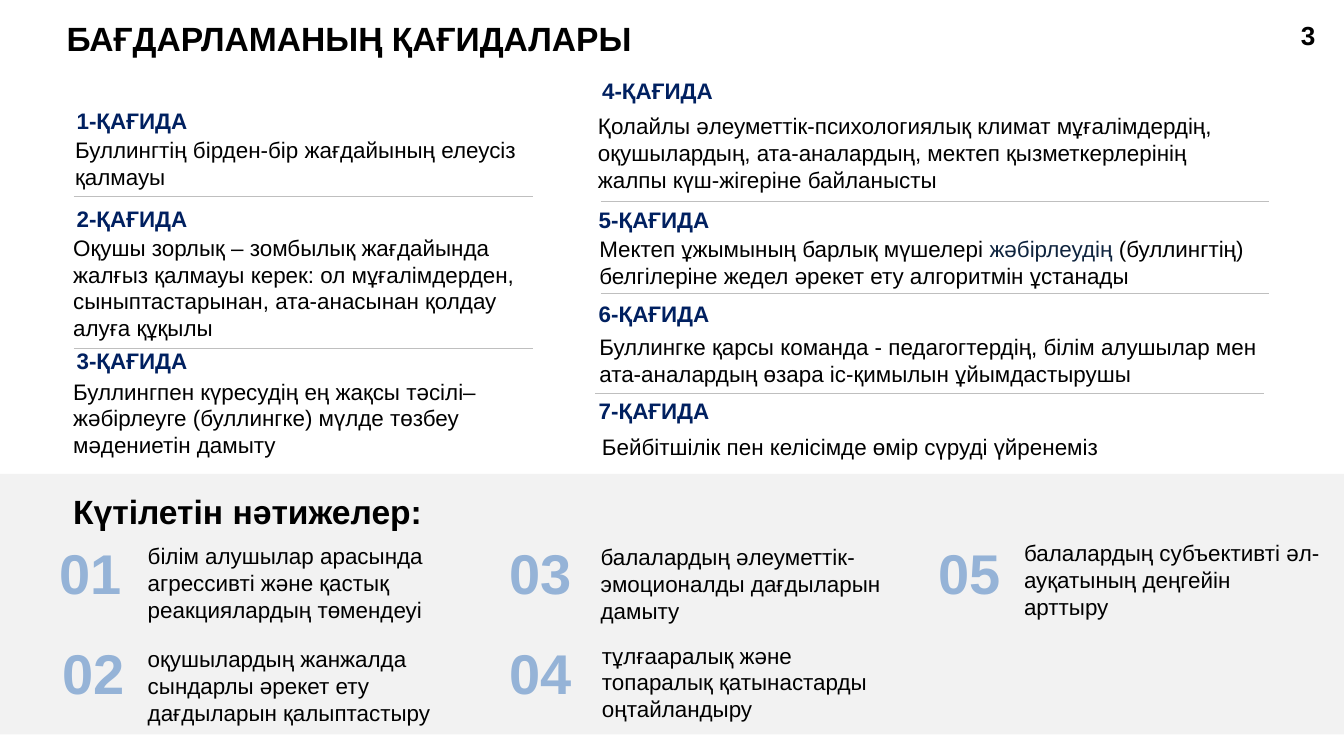
import pptx
import pptx.dml.color
import pptx.enum.shapes
import pptx.enum.text
import pptx.util
import lxml.etree

# The grid has 20 columns and 11.25 rows, each one inch.
COLS, ROWS = 20, 11.25
FONT = "Arial"
HEX = {"black": "000000", "navy": "002060", "ink": "0F243E",
       "blue": "95B3D7", "band": "F2F2F2", "rule": "BFBFBF"}
PAD = (0.1, 0.05)
FLUSH = (0, 0)

# Left edges of heads, and left and right ends of rules
LEFT_HEAD, RIGHT_HEAD = 1.14, 8.91
LEFT_RULE, RIGHT_RULE = (1.1, 7.93), (8.94, 18.89)

# Head column and row, then body box, then body runs
RULES = [
    ((LEFT_HEAD, 1.59), (1.02, 1.98, 7, 0.91),
     [("Буллингтің бірден-бір жағдайының елеусіз қалмауы", "black")]),
    ((LEFT_HEAD, 3.05), (0.99, 3.43, 7.4, 1.72),
     [("Оқушы зорлық – зомбылық жағдайында жалғыз қалмауы керек: ол "
       "мұғалімдерден, сыныптастарынан, ата-анасынан қолдау алуға құқылы",
       "black")]),
    ((LEFT_HEAD, 5.17), (0.99, 5.57, 7.4, 1.31),
     [("Буллингпен күресудің ең жақсы тәсілі–жәбірлеуге (буллингке) мүлде "
       "төзбеу мәдениетін дамыту", "black")]),
    ((8.96, 1.14), (8.8, 1.62, 10.02, 1.31),
     [("Қолайлы әлеуметтік-психологиялық климат мұғалімдердің, оқушылардың, "
       "ата-аналардың, мектеп қызметкерлерінің жалпы күш-жігеріне "
       "байланысты", "black")]),
    ((RIGHT_HEAD, 3.06), (8.82, 3.45, 10.44, 0.91),
     [("Мектеп ұжымының барлық мүшелері ", "black"),
      ("жәбірлеудің ", "ink"),
      ("(буллингтің) белгілеріне жедел әрекет ету алгоритмін ұстанады",
       "black")]),
    ((RIGHT_HEAD, 4.46), (8.82, 4.91, 10.2, 0.91),
     [("Буллингке қарсы команда - педагогтердің, білім алушылар мен "
       "ата-аналардың өзара іс-қимылын ұйымдастырушы", "black")]),
    ((RIGHT_HEAD, 5.91), (8.86, 6.4, 8.5, 0.5),
     [("Бейбітшілік пен келісімде өмір сүруді үйренеміз", "black")]),
]

# Number column and row, then text column, row and width, then text
GOALS = [
    ((0.88, 8.02), (2.1, 8.02, 5.27),
     "білім алушылар арасында агрессивті және қастық реакциялардың төмендеуі"),
    ((0.93, 9.5), (2.1, 9.55, 5),
     "оқушылардың жанжалда сындарлы әрекет ету дағдыларын қалыптастыру"),
    ((7.58, 8.02), (8.84, 8.03, 4.61),
     "балалардың әлеуметтік-эмоционалды дағдыларын дамыту"),
    ((7.58, 9.5), (8.86, 9.5, 4.61),
     "тұлғааралық және топаралық қатынастарды оңтайландыру"),
    ((13.96, 8.02), (15.14, 7.97, 4.6),
     "балалардың субъективті әл-ауқатының деңгейін арттыру"),
]

LINES = [(LEFT_RULE, 2.92), (LEFT_RULE, 5.18), (RIGHT_RULE, 2.99),
         (RIGHT_RULE, 4.37), ((8.86, 18.81), 5.85)]


def grid(*cells):
    return [pptx.util.Inches(cell) for cell in cells]


def color(name):
    return pptx.dml.color.RGBColor.from_string(HEX[name])


def add_text(slide, box, parts, size=24, bold=False, pad=PAD, wrap=True):
    """Add a text box; parts is a list of (text, colour name) runs."""
    frame = slide.shapes.add_textbox(*grid(*box)).text_frame
    frame.word_wrap = wrap
    frame.auto_size = pptx.enum.text.MSO_AUTO_SIZE.SHAPE_TO_FIT_TEXT
    frame.margin_left = frame.margin_right = pptx.util.Inches(pad[0])
    frame.margin_top = frame.margin_bottom = pptx.util.Inches(pad[1])
    for text, tone in parts:
        run = frame.paragraphs[0].add_run()
        run.text = text
        run.font.name = FONT
        run.font.size = pptx.util.Pt(size)
        run.font.bold = bold
        run.font.color.rgb = color(tone)


def add_band(slide, top, height):
    band = slide.shapes.add_shape(pptx.enum.shapes.MSO_SHAPE.RECTANGLE,
                                  *grid(0, top, COLS, height))
    band.shadow.inherit = False
    band.fill.solid()
    band.fill.fore_color.rgb = color("band")
    band.line.fill.background()


def add_line(slide, ends, row):
    line = slide.shapes.add_connector(
        pptx.enum.shapes.MSO_CONNECTOR.STRAIGHT,
        *grid(ends[0], row, ends[1], row))
    line.line.color.rgb = color("rule")
    line.line.width = pptx.util.Pt(0.75)
    props = line.element.find(pptx.oxml.ns.qn("p:spPr"))
    lxml.etree.SubElement(props, pptx.oxml.ns.qn("a:effectLst"))


def add_rule(slide, count, head, body, parts):
    """Add one numbered principle: its head and its body."""
    add_text(slide, (*head, 2.5, 0.4), [(f"{count}-ҚАҒИДА", "navy")],
             bold=True, pad=FLUSH)
    add_text(slide, body, parts)


def add_goal(slide, count, spot, body, text):
    """Add one expected result: its large number and its text."""
    add_text(slide, (*spot, 1.28, 1.02), [(f"{count:02}", "blue")],
             size=60, bold=True, pad=FLUSH)
    add_text(slide, (*body, 1.31), [(text, "black")])


def main():
    deck = pptx.Presentation()
    deck.slide_width, deck.slide_height = grid(COLS, ROWS)
    slide = deck.slides.add_slide(deck.slide_layouts[6])

    add_band(slide, 7.05, 3.88)
    add_text(slide, (0.99, 0.27, 10.49, 0.61),
             [("БАҒДАРЛАМАНЫҢ ҚАҒИДАЛАРЫ", "black")],
             size=36, bold=True, pad=FLUSH)
    add_text(slide, (19.26, 0.24, 0.7, 0.57), [("3", "black")],
             size=28, bold=True)
    for count, rule in enumerate(RULES, 1):
        add_rule(slide, count, *rule)
    for ends, row in LINES:
        add_line(slide, ends, row)

    add_text(slide, (0.99, 7.26, 5.61, 0.71),
             [("Күтілетін нәтижелер:", "black")],
             size=36, bold=True, wrap=False)
    for count, goal in enumerate(GOALS, 1):
        add_goal(slide, count, *goal)

    deck.save("out.pptx")


if __name__ == "__main__":
    main()
